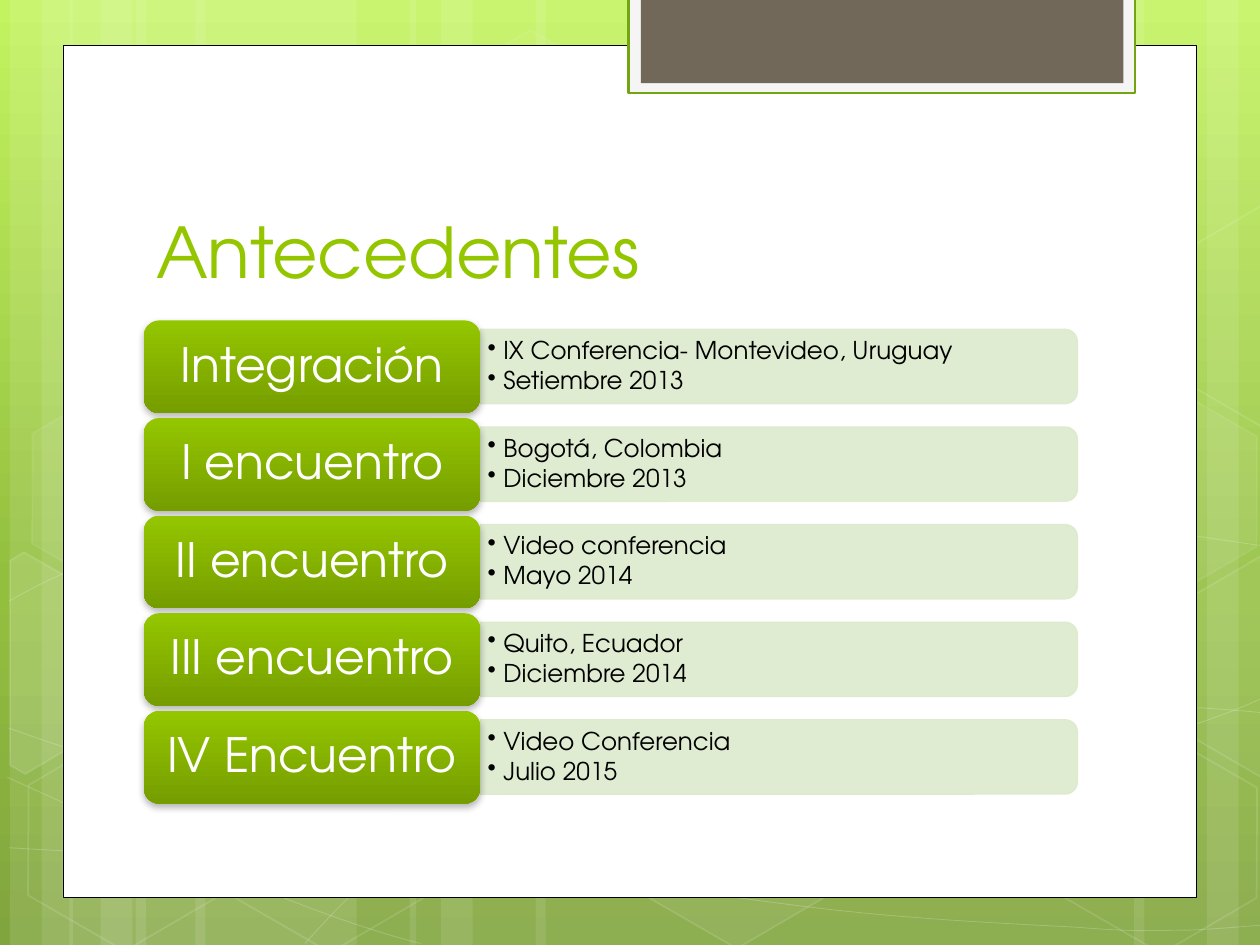
from copy import deepcopy
from math import cos, radians, sin
from typing import Any, NamedTuple, Optional

from lxml import etree
from pptx import Presentation
from pptx.dml.color import RGBColor
from pptx.dml.fill import FillFormat
from pptx.enum.shapes import MSO_SHAPE
from pptx.enum.text import MSO_ANCHOR, PP_ALIGN
from pptx.oxml.ns import qn
from pptx.shapes.autoshape import Shape
from pptx.slide import Slide
from pptx.text.text import TextFrame
from pptx.util import Cm, Pt

RECTANGLE = MSO_SHAPE.RECTANGLE
HEXAGON = MSO_SHAPE.HEXAGON
ROUNDED = MSO_SHAPE.ROUNDED_RECTANGLE
ROUND_TOP = MSO_SHAPE.ROUND_2_SAME_RECTANGLE
MIDDLE, BOTTOM = MSO_ANCHOR.MIDDLE, MSO_ANCHOR.BOTTOM
LEFT, CENTER = PP_ALIGN.LEFT, PP_ALIGN.CENTER

WHITE = RGBColor(0xFF, 0xFF, 0xFF)
BLACK = RGBColor(0x00, 0x00, 0x00)
LIME = RGBColor(0x94, 0xC6, 0x00)
DARK_LIME = RGBColor(0x76, 0x9D, 0x00)
TAB_EDGE = RGBColor(0x74, 0xA5, 0x10)
TAB_PALE = RGBColor(0xF5, 0xF5, 0xF5)
TAB_BROWN = RGBColor(0x71, 0x68, 0x5A)
PANEL_GREEN = RGBColor(0xDC, 0xEA, 0xCC)
SKY_TOP = RGBColor(0xC3, 0xF3, 0x5F)
SKY_MIDDLE = RGBColor(0x93, 0xBF, 0x3F)
SKY_BOTTOM = RGBColor(0x81, 0xA5, 0x3E)

FONT = "TeX Gyre Adventor"
SLIDE_WIDTH, SLIDE_HEIGHT = 25.4, 19.05
FIRST_ROW_TOP, LAST_ROW_TOP = 6.46, 14.33
LABEL_LEFT, LABEL_WIDTH, LABEL_HEIGHT = 2.9, 6.78, 1.87
PANEL_LEFT, PANEL_WIDTH, PANEL_HEIGHT = 9.68, 12.04, 1.5
HEXAGON_TURN = 30

Point = tuple[float, float]


class Paint(NamedTuple):
    color: RGBColor
    opacity: int = 100
    weight: float = 0


class Hexagon(NamedTuple):
    left: float
    top: float
    fill_opacity: int
    edge_opacity: int


class CutHexagon(NamedTuple):
    corners: list[Point]
    center: Point
    fill_opacity: int


class Meeting(NamedTuple):
    label: str
    details: tuple[str, str]


STRIPES = [(2.74, 4.45), (0.2, 1.27), (0.84, 2.11), (3.94, 4.45), (1.4, 1.27), (2.03, 2.11),
           (18.62, 4.45), (24.33, 1.27), (22.86, 2.11), (10.8, 7.82), (8.26, 1.27), (8.89, 2.11)]

CURVES = [
    [(0.18, 17.09), (1.55, 17.17), (2.92, 17.25), (4.83, 17.22), (6.73, 17.2), (9.09, 17.14),
     (11.63, 16.89), (14.17, 16.64), (17.78, 16.15), (20.12, 15.67), (22.43, 15.19),
     (24.82, 14.43), (25.58, 14)],
    [(0.18, 12.12), (0.91, 11.71), (1.65, 11.33), (3.07, 10.95), (4.52, 10.57), (6.58, 10.01),
     (8.81, 9.83), (11.07, 9.65), (13.82, 9.63), (16.61, 9.83), (19.41, 10.03),
     (24.05, 10.82), (25.58, 11.02)],
    [(0.15, 15.67), (3.23, 17.07), (6.27, 18.47), (8.48, 19.02)],
    [(0.18, 14.68), (0.97, 14.96), (1.78, 15.24), (3.25, 15.65), (4.72, 16.03), (6.93, 16.66),
     (9.07, 17.09), (11.18, 17.53), (13.84, 17.98), (15.95, 18.24), (18.06, 18.52),
     (20.32, 18.62), (21.67, 18.69), (22.99, 18.8), (23.34, 18.75), (24, 18.75),
     (24.66, 18.72), (25.12, 18.67), (25.58, 18.64)],
    [(6.15, 19.02), (6.6, 18.52), (7.06, 18.01), (7.67, 17.55), (8.28, 17.09), (9.14, 16.59),
     (9.86, 16.23), (10.57, 15.88), (11, 15.72), (11.94, 15.47), (12.88, 15.21),
     (14.55, 14.86), (15.44, 14.68), (16.36, 14.5), (16.48, 14.5), (17.27, 14.45),
     (18.06, 14.38), (19.3, 14.3), (20.17, 14.27), (21.06, 14.25), (22.5, 14.27),
     (24.21, 14.27), (24.66, 14.3), (25.1, 14.33), (25.55, 14.38)],
]

HEXAGONS = [
    Hexagon(8.48, 0.91, 4, 8), Hexagon(12.62, 14.96, 6, 12), Hexagon(0.28, 15.01, 0, 12),
    Hexagon(0.36, 7.92, 7, 8), Hexagon(4.42, 15.04, 0, 12), Hexagon(19.13, 11.51, 10, 12),
    Hexagon(21.18, 15.06, 0, 12), Hexagon(21.18, 7.98, 7, 8),
]

CUT_HEXAGONS = [
    CutHexagon([(0.2, 11.3), (0.48, 11.13), (2.44, 12.24), (2.41, 14.48), (0.51, 15.6),
                (0.2, 15.42)], (0.91, 13.59), 10),
    CutHexagon([(23.52, 12.32), (25.43, 11.2), (25.63, 11.33), (25.63, 15.57),
                (25.45, 15.67), (23.52, 14.55)], (25.02, 13.21), 4),
    CutHexagon([(23.52, 5.26), (25.43, 4.14), (25.65, 4.27), (25.63, 8.51),
                (25.45, 8.61), (23.52, 7.49)], (25.02, 6.12), 0),
]

MEETINGS = [
    Meeting("Integración", ("IX Conferencia- Montevideo, Uruguay", "Setiembre 2013")),
    Meeting("I encuentro", ("Bogotá, Colombia", "Diciembre 2013")),
    Meeting("II encuentro", ("Video conferencia", "Mayo 2014")),
    Meeting("III encuentro", ("Quito, Ecuador", "Diciembre 2014")),
    Meeting("IV Encuentro", ("Video Conferencia", "Julio 2015")),
]


def apply(target: Any, values: dict[str, Any]) -> None:
    for name, value in values.items():
        setattr(target, name, value)


def paint_solid(fill: FillFormat, paint: Optional[Paint], owner: Any) -> None:
    if paint is None or paint.opacity == 0:
        fill.background()
        return
    fill.solid()
    fill.fore_color.rgb = paint.color
    if paint.opacity < 100:
        color = owner.find(qn("a:solidFill")).find(qn("a:srgbClr"))
        etree.SubElement(color, qn("a:alpha"), val=str(paint.opacity * 1000))


def paint_gradient(fill: FillFormat, stops: list[tuple[float, RGBColor]]) -> None:
    fill.gradient()
    fill.gradient_angle = 270
    first = fill.gradient_stops[0]._gs
    for _ in stops[2:]:
        first.addnext(deepcopy(first))
    for stop, (position, color) in zip(fill.gradient_stops, stops):
        stop.position = position
        stop.color.rgb = color


def finish(shape: Shape, fill: Optional[Paint], edge: Optional[Paint] = None) -> Shape:
    shape.shadow.inherit = False
    properties = shape._element.spPr
    paint_solid(shape.fill, fill, properties)
    if edge:
        shape.line.width = Pt(edge.weight)
    paint_solid(shape.line.fill, edge, properties.get_or_add_ln())
    return shape


def add_block(slide: Slide, kind: MSO_SHAPE, box: tuple[float, float, float, float],
              fill: Optional[Paint], edge: Optional[Paint] = None) -> Shape:
    return finish(slide.shapes.add_shape(kind, *map(Cm, box)), fill, edge)


def add_outline(slide: Slide, points: list[Point], close: bool,
                fill: Optional[Paint], edge: Paint) -> Shape:
    corners = [(Cm(x), Cm(y)) for x, y in points]
    builder = slide.shapes.build_freeform(*corners[0])
    builder.add_line_segments(corners[1:], close=close)
    return finish(builder.convert_to_shape(), fill, edge)


def bend(outline: Shape) -> None:
    segments = list(outline._element.spPr.iter(qn("a:lnTo")))
    for start in range(0, len(segments), 3):
        curve = etree.Element(qn("a:cubicBezTo"))
        segments[start].addprevious(curve)
        for segment in segments[start:start + 3]:
            curve.append(segment[0])
            segment.getparent().remove(segment)


def unturn(point: Point, center: Point) -> Point:
    angle = radians(-HEXAGON_TURN)
    across, down = point[0] - center[0], point[1] - center[1]
    return (center[0] + across * cos(angle) - down * sin(angle),
            center[1] + across * sin(angle) + down * cos(angle))


def write(frame: TextFrame, lines: tuple[str, ...], size: float, color: RGBColor,
          frame_format: dict[str, Any], paragraph_format: dict[str, Any]) -> None:
    apply(frame, {"word_wrap": True, **frame_format})
    for number, line in enumerate(lines):
        paragraph = frame.add_paragraph() if number else frame.paragraphs[0]
        apply(paragraph, paragraph_format)
        run = paragraph.add_run()
        run.text = line
        apply(run.font, {"name": FONT, "size": Pt(size)})
        run.font.color.rgb = color


def margins(side: float, end: float) -> dict[str, Any]:
    return {"margin_left": Cm(side), "margin_right": Cm(side),
            "margin_top": Cm(end), "margin_bottom": Cm(end)}


def draw_backdrop(slide: Slide) -> None:
    paint_gradient(slide.background.fill, [(0, SKY_TOP), (0.62, SKY_MIDDLE), (1, SKY_BOTTOM)])
    for left, width in STRIPES:
        add_block(slide, RECTANGLE, (left, 0, width, SLIDE_HEIGHT), Paint(WHITE, 10))
    for controls in CURVES:
        bend(add_outline(slide, controls, False, None, Paint(WHITE, 20, 0.5)))
    for cell in HEXAGONS:
        hexagon = add_block(slide, HEXAGON, (cell.left, cell.top, 4.45, 3.86),
                            Paint(WHITE, cell.fill_opacity), Paint(WHITE, cell.edge_opacity, 1))
        hexagon.adjustments[0] = 0.285
        hexagon.rotation = HEXAGON_TURN
    for cut in CUT_HEXAGONS:
        corners = [unturn(corner, cut.center) for corner in cut.corners]
        piece = add_outline(slide, corners, True, Paint(WHITE, cut.fill_opacity),
                            Paint(WHITE, 12, 1))
        piece.rotation = HEXAGON_TURN
    add_block(slide, RECTANGLE, (1.27, 0.91, 22.86, 17.19), Paint(WHITE), Paint(BLACK, 100, 0.5))
    add_block(slide, RECTANGLE, (12.67, -0.05, 10.21, 1.93), Paint(TAB_PALE),
              Paint(TAB_EDGE, 100, 1.25))
    add_block(slide, RECTANGLE, (12.92, -0.05, 9.73, 1.73), Paint(TAB_BROWN))


def draw_meeting(slide: Slide, meeting: Meeting, top: float) -> None:
    turn = (PANEL_WIDTH - PANEL_HEIGHT) / 2
    panel = add_block(slide, ROUND_TOP,
                      (PANEL_LEFT + turn, top + 0.18 - turn, PANEL_HEIGHT, PANEL_WIDTH),
                      Paint(PANEL_GREEN, 90), Paint(PANEL_GREEN, 90, 0.75))
    panel.rotation = 90
    details = slide.shapes.add_textbox(Cm(PANEL_LEFT), Cm(top + 0.26), Cm(11.96), Cm(1.35))
    write(details.text_frame, meeting.details, 14, BLACK,
          {"vertical_anchor": MIDDLE, **margins(0.15, 0.08)},
          {"level": 1, "alignment": LEFT, "line_spacing": 0.9, "space_after": Pt(2)})
    for paragraph in details.text_frame.paragraphs:
        properties = paragraph._p.get_or_add_pPr()
        properties.set("marL", str(Cm(0.32)))
        properties.set("indent", str(-Cm(0.32)))
        etree.SubElement(properties, qn("a:buChar"), char="••")

    label = add_block(slide, ROUNDED, (LABEL_LEFT, top, LABEL_WIDTH, LABEL_HEIGHT), None)
    paint_gradient(label.fill, [(0, LIME), (1, DARK_LIME)])
    effects = label._element.spPr.find(qn("a:effectLst"))
    shadow = etree.SubElement(effects, qn("a:outerShdw"), blurRad=str(Pt(4)), dist=str(Pt(2)),
                              dir="5400000", rotWithShape="0")
    shade = etree.SubElement(shadow, qn("a:srgbClr"), val=str(BLACK))
    etree.SubElement(shade, qn("a:alpha"), val="28000")
    write(label.text_frame, (meeting.label,), 27, WHITE,
          {"vertical_anchor": MIDDLE, **margins(0.28, 0.15)},
          {"alignment": CENTER, "line_spacing": 0.9})


def main() -> None:
    deck = Presentation()
    apply(deck, {"slide_width": Cm(SLIDE_WIDTH), "slide_height": Cm(SLIDE_HEIGHT)})
    slide = deck.slides.add_slide(deck.slide_layouts[6])
    draw_backdrop(slide)
    title = slide.shapes.add_textbox(Cm(2.9), Cm(2.84), Cm(19.51), Cm(3.18))
    write(title.text_frame, ("Antecedentes",), 40, LIME,
          {"vertical_anchor": BOTTOM}, {"alignment": LEFT})
    row_pitch = (LAST_ROW_TOP - FIRST_ROW_TOP) / (len(MEETINGS) - 1)
    for row, meeting in enumerate(MEETINGS):
        draw_meeting(slide, meeting, FIRST_ROW_TOP + row * row_pitch)
    deck.save("out.pptx")


if __name__ == "__main__":
    main()
